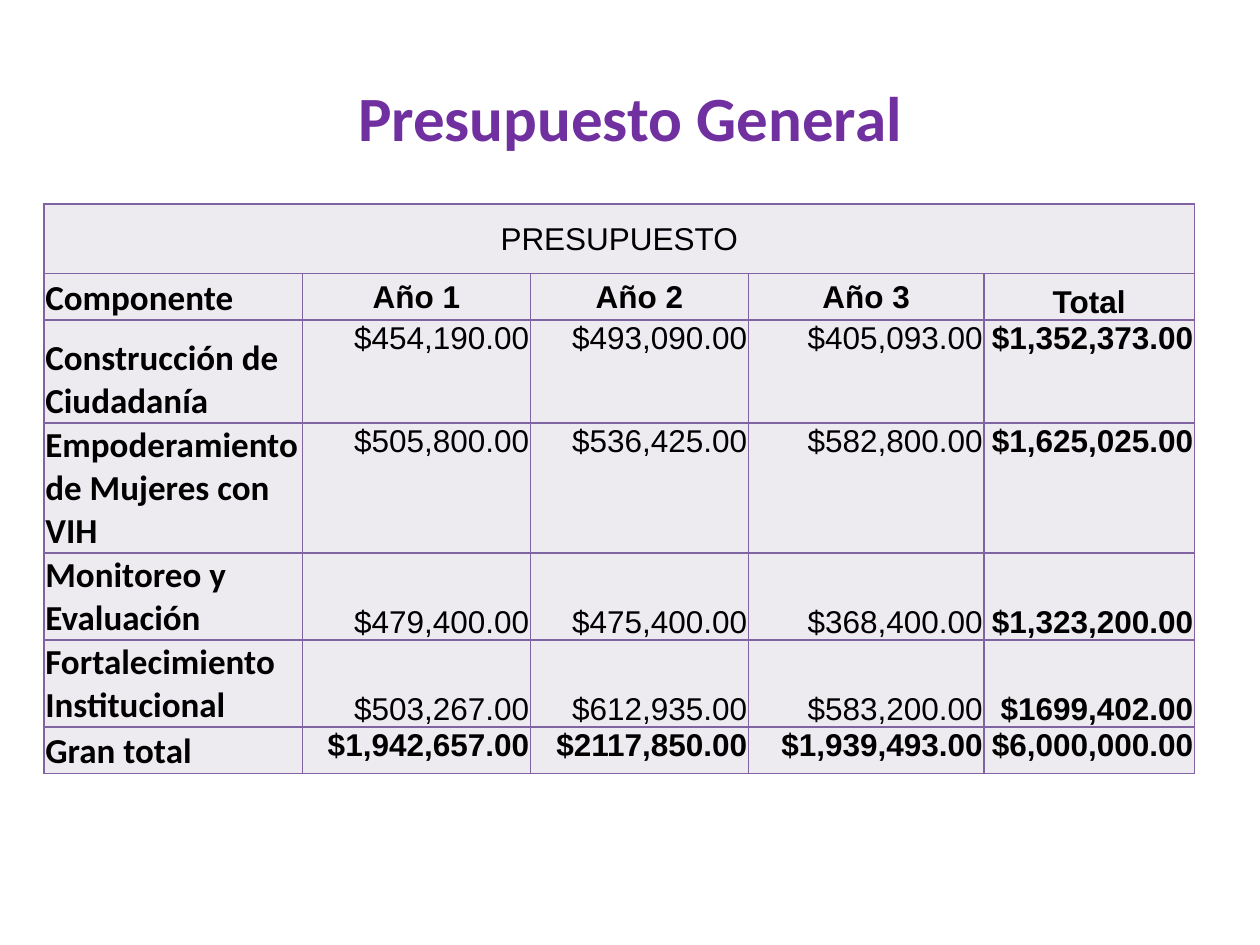
from dataclasses import dataclass

from lxml import etree
from pptx import Presentation
from pptx.dml.color import RGBColor
from pptx.enum.text import MSO_ANCHOR, PP_ALIGN
from pptx.oxml.ns import qn
from pptx.util import Pt

LEFT, CENTER, RIGHT = PP_ALIGN.LEFT, PP_ALIGN.CENTER, PP_ALIGN.RIGHT
TOP, MIDDLE, BOTTOM = MSO_ANCHOR.TOP, MSO_ANCHOR.MIDDLE, MSO_ANCHOR.BOTTOM

COLUMN_WIDTHS = [147.6, 130.3, 124.6, 134.6, 120.3]
ROW_HEIGHTS = [39.8, 26.5, 58.9, 74.3, 49.7, 49.7, 26.5]
BUDGET_ROWS = [
    ["PRESUPUESTO"],
    ["Componente", "Año 1", "Año 2", "Año 3", "Total"],
    ["Construcción de Ciudadanía", "$454,190.00", "$493,090.00", "$405,093.00", "$1,352,373.00"],
    ["Empoderamiento de Mujeres con VIH", "$505,800.00", "$536,425.00", "$582,800.00", "$1,625,025.00"],
    ["Monitoreo y Evaluación", "$479,400.00", "$475,400.00", "$368,400.00", "$1,323,200.00"],
    ["Fortalecimiento Institucional", "$503,267.00", "$612,935.00", "$583,200.00", "$1699,402.00"],
    ["Gran total", "$1,942,657.00", "$2117,850.00", "$1,939,493.00", "$6,000,000.00"],
]
HEADER_ROW = 1
ROW_ANCHORS = [MIDDLE, MIDDLE, TOP, TOP, BOTTOM, BOTTOM, TOP]


@dataclass(frozen=True)
class Theme:
    title_color: str = "7030A0"
    text_color: str = "000000"
    cell_fill: str = "EDEAF0"
    border_color: str = "8064A2"
    border_width: float = 1
    label_font: str = "Calibri"
    value_font: str = "Arial"
    title_size: float = 36
    label_size: float = 20
    value_size: float = 18


class SlideBuilder:
    def __init__(self, slide, theme):
        self.slide = slide
        self.theme = theme

    def set_text(self, text_frame, text, font, size, color, bold, alignment):
        text_frame.text = text
        text_frame.word_wrap = True
        paragraph = text_frame.paragraphs[0]
        paragraph.alignment = alignment
        for run in paragraph.runs:
            run.font.name = font
            run.font.size = Pt(size)
            run.font.bold = bold
            run.font.color.rgb = RGBColor.from_string(color)

    def title(self, text, left, top, width, height):
        shape = self.slide.shapes.add_textbox(Pt(left), Pt(top), Pt(width), Pt(height))
        theme = self.theme
        self.set_text(shape.text_frame, text, theme.label_font, theme.title_size,
                      theme.title_color, True, CENTER)
        shape.text_frame.vertical_anchor = MIDDLE

    def borders(self, cell):
        properties = cell._tc.get_or_add_tcPr()
        for index, side in enumerate(("lnL", "lnR", "lnT", "lnB")):
            line = etree.Element(qn(f"a:{side}"), w=str(Pt(self.theme.border_width)))
            fill = etree.SubElement(line, qn("a:solidFill"))
            etree.SubElement(fill, qn("a:srgbClr"), val=self.theme.border_color)
            properties.insert(index, line)

    def cell(self, cell, text, is_label, bold, alignment, anchor):
        theme = self.theme
        cell.margin_left = cell.margin_right = cell.margin_top = Pt(0.72)
        cell.margin_bottom = 0
        cell.vertical_anchor = anchor
        cell.fill.solid()
        cell.fill.fore_color.rgb = RGBColor.from_string(theme.cell_fill)
        self.borders(cell)
        font, size = ((theme.label_font, theme.label_size) if is_label
                      else (theme.value_font, theme.value_size))
        self.set_text(cell.text_frame, text, font, size, theme.text_color, bold, alignment)

    def budget_table(self, left, top):
        last_row, last_column = len(ROW_HEIGHTS) - 1, len(COLUMN_WIDTHS) - 1
        table = self.slide.shapes.add_table(
            len(ROW_HEIGHTS), len(COLUMN_WIDTHS), Pt(left), Pt(top),
            Pt(sum(COLUMN_WIDTHS)), Pt(sum(ROW_HEIGHTS))).table
        table.first_row = table.horz_banding = False
        for column, width in zip(table.columns, COLUMN_WIDTHS):
            column.width = Pt(width)
        for row, height in zip(table.rows, ROW_HEIGHTS):
            row.height = Pt(height)
        table.cell(0, 0).merge(table.cell(0, last_column))
        for row in range(last_row + 1):
            for column in range(last_column + 1):
                text = BUDGET_ROWS[row][column] if column < len(BUDGET_ROWS[row]) else ""
                is_label = row >= HEADER_ROW and column == 0
                is_total = row in (HEADER_ROW, last_row) or column == last_column
                bold = row >= HEADER_ROW and (is_label or is_total)
                alignment = LEFT if is_label else CENTER if row <= HEADER_ROW else RIGHT
                total_heading = row == HEADER_ROW and column == last_column
                anchor = BOTTOM if is_label or total_heading else ROW_ANCHORS[row]
                self.cell(table.cell(row, column), text, is_label, bold, alignment, anchor)


def main():
    """Build the general budget slide."""
    presentation = Presentation()
    presentation.slide_width, presentation.slide_height = Pt(720), Pt(540)
    slide = presentation.slides.add_slide(presentation.slide_layouts[6])
    builder = SlideBuilder(slide, Theme())
    builder.title("Presupuesto General", 36, 21.6, 648, 90)
    builder.budget_table(25.2, 116.6)
    presentation.save("out.pptx")


if __name__ == "__main__":
    main()
